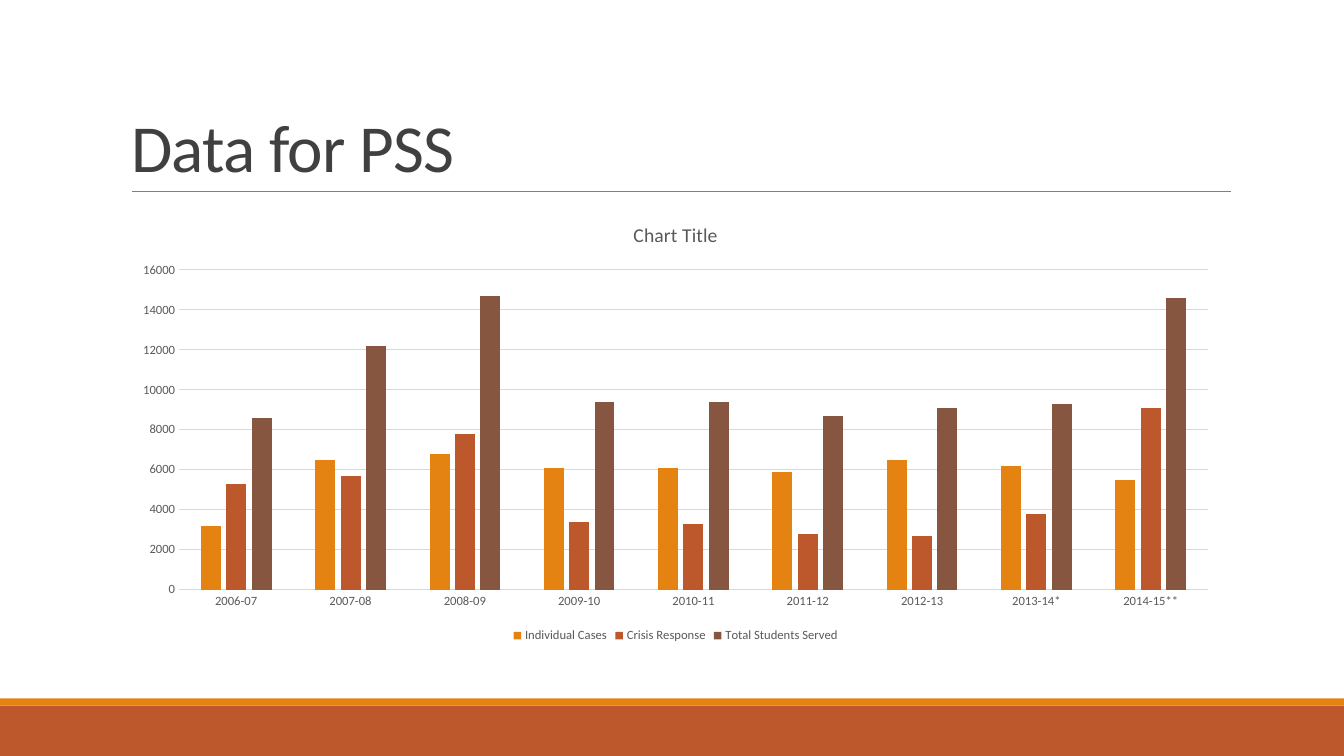
from lxml import etree
from pptx import Presentation
from pptx.chart.data import CategoryChartData
from pptx.dml.color import RGBColor
from pptx.enum import chart as charts, shapes, text
from pptx.oxml import ns
from pptx.util import Inches, Pt

TITLE = "Data for PSS"
CHART_TITLE = "Chart Title"
YEARS = ["2006-07", "2007-08", "2008-09", "2009-10", "2010-11",
         "2011-12", "2012-13", "2013-14*", "2014-15**"]
SERIES = [
    ("Individual Cases", "E48312", [3200, 6500, 6800, 6100, 6100, 5900, 6500, 6200, 5500]),
    ("Crisis Response", "BD582C", [5300, 5700, 7800, 3400, 3300, 2800, 2700, 3800, 9100]),
    ("Total Students Served", "865640", [8600, 12200, 14700, 9400, 9400, 8700, 9100, 9300, 14600]),
]
BANDS = [(7, 0.5, "BD582C"), (6.93, 0.07, "E48312")]
WIDTH, HEIGHT = 13.33, 7.5
LEFT, CONTENT_WIDTH = 1.2, 11
RULE = (1.31, 12.21, 1.9)
GRAY, GRID = "595959", "D9D9D9"


def color(value):
    return RGBColor.from_string(value)


def apply(target, **values):
    for name, value in values.items():
        setattr(target, name, value)


def style_font(font, size, shade):
    apply(font, name="Calibri", size=Pt(size), bold=False)
    font.color.rgb = color(shade)


def style_line(line, shade, width):
    line.color.rgb = color(shade)
    line.width = Pt(width)


def add_bands(page):
    for top, height, shade in BANDS:
        band = page.shapes.add_shape(shapes.MSO_SHAPE.RECTANGLE, 0, Inches(top),
                                     Inches(WIDTH), Inches(height))
        band.shadow.inherit = False
        band.fill.solid()
        band.fill.fore_color.rgb = color(shade)
        band.line.fill.background()


def add_rule(page):
    start, end, top = map(Inches, RULE)
    rule = page.shapes.add_connector(shapes.MSO_CONNECTOR.STRAIGHT, start, top, end, top)
    style_line(rule.line, "808080", 0.5)
    etree.SubElement(rule._element.spPr, ns.qn("a:effectLst"))


def set_title(page):
    box = page.shapes.title
    apply(box, left=Inches(LEFT), top=Inches(0.31),
          width=Inches(CONTENT_WIDTH), height=Inches(1.59))
    apply(box.text_frame, text=TITLE, word_wrap=True,
          vertical_anchor=text.MSO_ANCHOR.BOTTOM)
    para = box.text_frame.paragraphs[0]
    apply(para, alignment=text.PP_ALIGN.LEFT, line_spacing=0.85)
    span = para.runs[0]
    style_font(span.font, 48, "404040")
    span.font._element.set("spc", "-50")


def add_chart(page):
    data = CategoryChartData()
    data.categories = YEARS
    for name, _, values in SERIES:
        data.add_series(name, values)
    chart = page.shapes.add_chart(
        charts.XL_CHART_TYPE.COLUMN_CLUSTERED, Inches(LEFT), Inches(2.02),
        Inches(CONTENT_WIDTH), Inches(4.4), data).chart
    style_font(chart.font, 10, "000000")

    chart.has_title = True
    chart.chart_title.include_in_layout = False
    frame = chart.chart_title.text_frame
    frame.text = CHART_TITLE
    style_font(frame.paragraphs[0].runs[0].font, 14, GRAY)

    chart.has_legend = True
    apply(chart.legend, position=charts.XL_LEGEND_POSITION.BOTTOM, include_in_layout=False)
    style_font(chart.legend.font, 9, GRAY)

    plot = chart.plots[0]
    apply(plot, gap_width=219, overlap=-27, vary_by_categories=False)
    for series, (_, shade, _) in zip(plot.series, SERIES):
        series.format.fill.solid()
        series.format.fill.fore_color.rgb = color(shade)

    for axis in (chart.category_axis, chart.value_axis):
        apply(axis, major_tick_mark=charts.XL_TICK_MARK.NONE,
              minor_tick_mark=charts.XL_TICK_MARK.NONE)
        style_font(axis.tick_labels.font, 9, GRAY)
    style_line(chart.category_axis.format.line, GRID, 0.75)
    apply(chart.value_axis, minimum_scale=0, maximum_scale=16000, major_unit=2000)
    chart.value_axis.format.line.fill.background()
    style_line(chart.value_axis.major_gridlines.format.line, GRID, 0.75)


def main():
    deck = Presentation()
    apply(deck, slide_width=Inches(WIDTH), slide_height=Inches(HEIGHT))
    page = deck.slides.add_slide(deck.slide_layouts[5])
    add_bands(page)
    add_rule(page)
    set_title(page)
    add_chart(page)
    deck.save("out.pptx")


if __name__ == "__main__":
    main()
